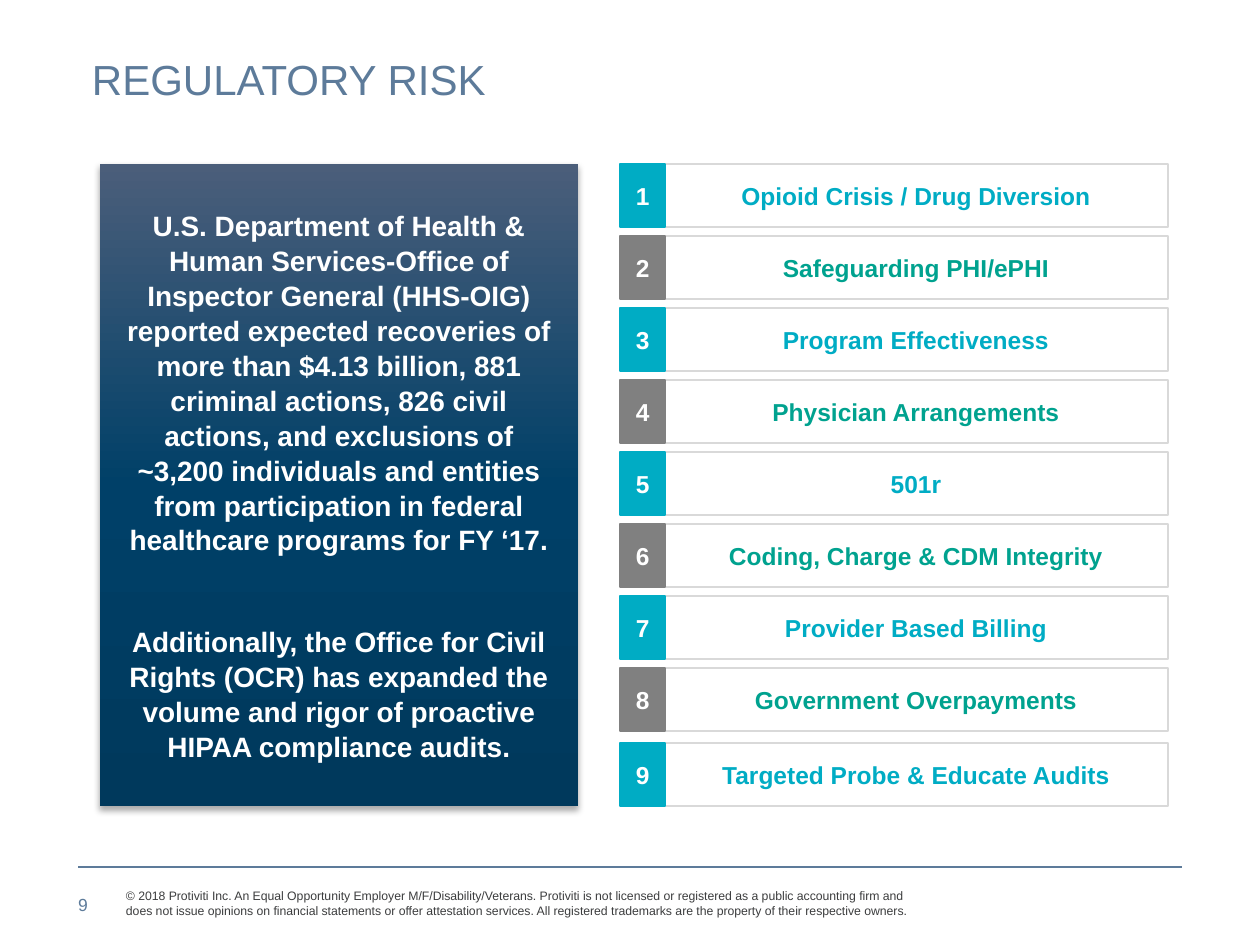
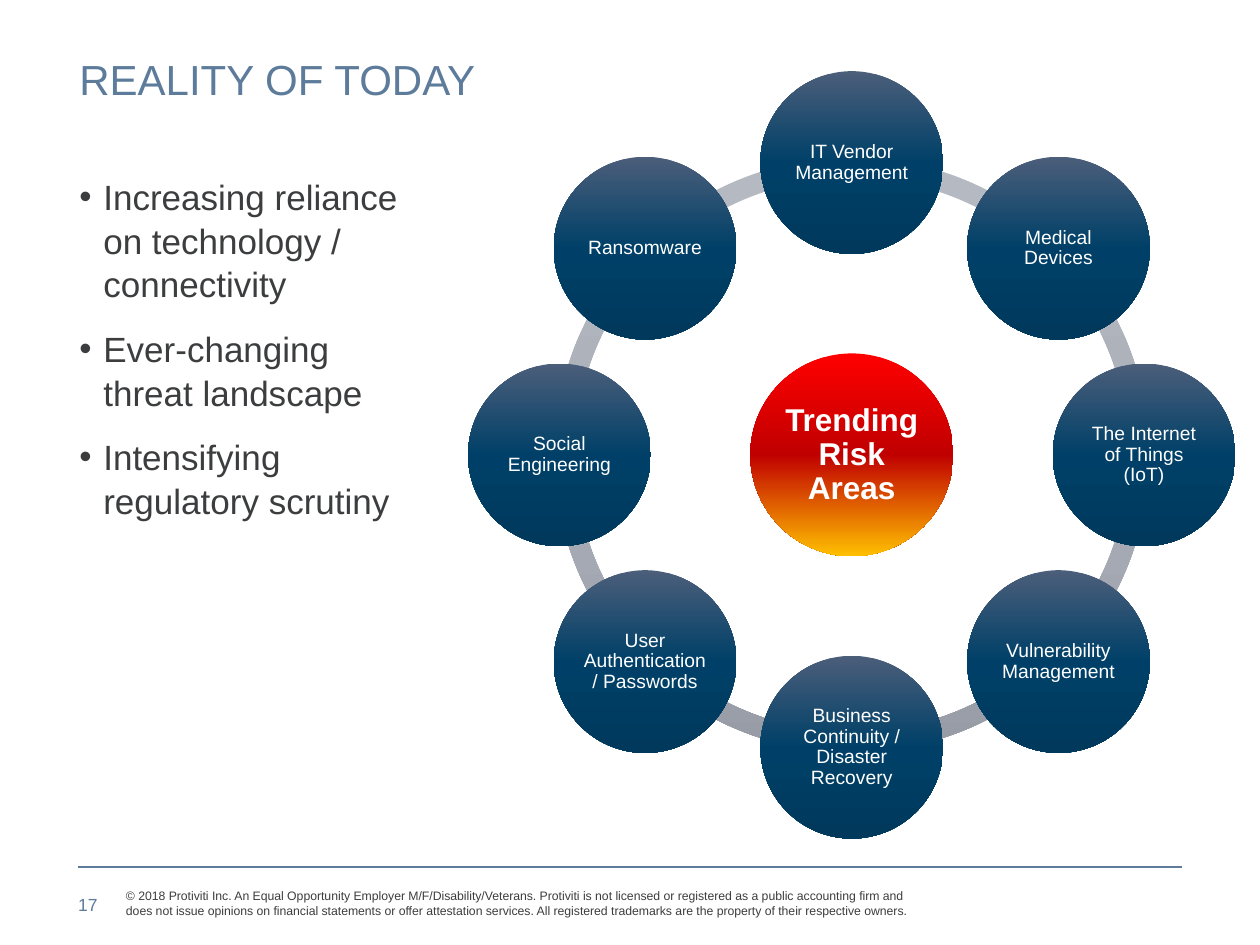
import math

from lxml import etree
from pptx import Presentation
from pptx.dml.color import RGBColor
from pptx.enum import shapes, text
from pptx.oxml import ns
from pptx.util import Inches, Pt

FONT = "Arial"
COLORS = {
    "slate": "5D7B9A", "ink": "3C3D3E", "white": "FFFFFF", "teal": "00ACC4",
    "green": "00A28F", "gray": "808080", "border": "D9D9D9",
}
NAVY = ("4B5E7A", "004068", "00395C")
FIRE = ("FF0000", "C00000", "FFC000")
SILVER = ("B5B9C1", "ABB0B9", "979CA6")

COPYRIGHT = (
    "© 2018 Protiviti Inc. An Equal Opportunity Employer M/F/Disability/Veterans. "
    "Protiviti is not licensed or registered as a public accounting firm and does not "
    "issue opinions on financial statements or offer attestation services. All registered "
    "trademarks are the property of their respective owners."
)
RECOVERIES = [
    "U.S. Department of Health & Human Services-Office of Inspector General (HHS-OIG) "
    "reported expected recoveries of more than $4.13 billion, 881 criminal actions, "
    "826 civil actions, and exclusions of ~3,200 individuals and entities from "
    "participation in federal healthcare programs for FY ‘17.",
    "Additionally, the Office for Civil Rights (OCR) has expanded the volume and rigor "
    "of proactive HIPAA compliance audits.",
]
REGULATORY_RISKS = [
    "Opioid Crisis / Drug Diversion", "Safeguarding PHI/ePHI", "Program Effectiveness",
    "Physician Arrangements", "501r", "Coding, Charge & CDM Integrity",
    "Provider Based Billing", "Government Overpayments", "Targeted Probe & Educate Audits",
]
REALITIES = [
    "Increasing reliance on technology / connectivity",
    "Ever-changing threat landscape",
    "Intensifying regulatory scrutiny",
]
# Clockwise from the top
TRENDING_RISKS = [
    "IT Vendor Management", "Medical Devices", "The Internet of Things (IoT)",
    "Vulnerability Management", "Business Continuity / Disaster Recovery",
    "User Authentication / Passwords", "Social Engineering", "Ransomware",
]


# Formatting helpers
def rgb(name):
    return RGBColor.from_string(COLORS[name])


def place(sp, left, top, width, height):
    sp.left, sp.top = Inches(left), Inches(top)
    sp.width, sp.height = Inches(width), Inches(height)


def write(sp, lines, size, color, bold=False, align=text.PP_ALIGN.LEFT, inset=None,
          anchor=text.MSO_ANCHOR.MIDDLE, leading=1.0, gap=0, bullets=False):
    tf = sp.text_frame
    tf.word_wrap = True
    tf.auto_size = text.MSO_AUTO_SIZE.NONE
    tf.vertical_anchor = anchor
    if inset is not None:
        tf.margin_left = tf.margin_right = Inches(inset)
        tf.margin_top = tf.margin_bottom = Inches(inset)
    for i, line in enumerate(lines):
        p = tf.paragraphs[0] if i == 0 else tf.add_paragraph()
        p.text = line
        p.alignment = align
        p.line_spacing = leading
        p.space_before = Pt(gap if i else 0)
        p.space_after = Pt(0)
        set_bullet(p, bullets)
        for r in p.runs:
            r.font.name, r.font.size, r.font.bold = FONT, Pt(size), bold
            r.font.color.rgb = rgb(color)
    return tf


def set_bullet(p, shown):
    pPr = p._p.get_or_add_pPr()
    indent = Inches(0.19) if shown else 0
    pPr.set("marL", str(indent))
    pPr.set("indent", str(-indent))
    if shown:
        etree.SubElement(pPr, ns.qn("a:buFont"), typeface=FONT)
        etree.SubElement(pPr, ns.qn("a:buChar"), char="•")
    else:
        etree.SubElement(pPr, ns.qn("a:buNone"))


def fill_gradient(sp, stops):
    """Fill from top to bottom with evenly spaced colours."""
    sp.fill.gradient()
    sp.fill.gradient_angle = 270
    gs_list = sp._element.spPr.find(".//" + ns.qn("a:gsLst"))
    for gs in list(gs_list):
        gs_list.remove(gs)
    for i, color in enumerate(stops):
        pos = 100000 * i // (len(stops) - 1)
        gs = etree.SubElement(gs_list, ns.qn("a:gs"), pos=str(pos))
        etree.SubElement(gs, ns.qn("a:srgbClr"), val=color)


def add_soft_shadow(sp):
    effects = etree.SubElement(sp._element.spPr, ns.qn("a:effectLst"))
    shadow = etree.SubElement(effects, ns.qn("a:outerShdw"), blurRad=str(Pt(3.5)),
                              dist=str(Pt(2.2)), dir="5400000", rotWithShape="0")
    color = etree.SubElement(shadow, ns.qn("a:srgbClr"), val="000000")
    etree.SubElement(color, ns.qn("a:alpha"), val="32000")


# Elements
def add_slide(prs, title, number, title_inset):
    slide = prs.slides.add_slide(prs.slide_layouts[1])
    place(slide.shapes.title, 0.63, 0, 8.75, 1.25)
    tf = write(slide.shapes.title, [title], 24, "slate", inset=0)
    tf.margin_left = tf.margin_right = Inches(title_inset)

    # Footer rule, page number and copyright line
    rule = slide.shapes.add_connector(shapes.MSO_CONNECTOR.STRAIGHT, Inches(0.62),
                                      Inches(6.88), Inches(9.38), Inches(6.88))
    rule.line.color.rgb = rgb("slate")
    rule.line.width = Pt(1)
    etree.SubElement(rule._element.spPr, ns.qn("a:effectLst"))
    for label, left, top, width, height, size, color in (
        (COPYRIGHT, 1, 7.05, 6.27, 0.24, 7, "ink"),
        (str(number), 0.62, 7.09, 0.3, 0.17, 10, "slate"),
    ):
        box = slide.shapes.add_textbox(0, 0, 0, 0)
        place(box, left, top, width, height)
        write(box, [label], size, color, inset=0)
    return slide


def add_shape(slide, kind, left, top, width, height):
    sp = slide.shapes.add_shape(kind, Inches(left), Inches(top),
                                Inches(width), Inches(height))
    sp.shadow.inherit = False
    return sp


def add_cell(slide, left, top, width, label, color, line, fill=None):
    sp = add_shape(slide, shapes.MSO_SHAPE.RECTANGLE, left, top, width, 0.5)
    if fill:
        sp.fill.solid()
        sp.fill.fore_color.rgb = rgb(fill)
    else:
        sp.fill.background()
    sp.line.color.rgb = rgb(line)
    sp.line.width = Pt(1)
    write(sp, [label], 14, color, bold=True, align=text.PP_ALIGN.CENTER)


def add_risk_row(slide, number, top, label):
    odd = number % 2 == 1
    add_cell(slide, 5.27, top, 4, label, "teal" if odd else "green", "border")
    badge = "teal" if odd else "gray"
    add_cell(slide, 4.92, top, 0.36, str(number), "white", badge, badge)


def add_circle(slide, cx, cy, diameter, label, stops, size, bold=False):
    sp = add_shape(slide, shapes.MSO_SHAPE.OVAL, cx - diameter / 2, cy - diameter / 2,
                   diameter, diameter)
    fill_gradient(sp, stops)
    sp.line.fill.background()
    write(sp, [label], size, "white", bold, text.PP_ALIGN.CENTER, inset=0.02, leading=0.9)


def add_risk_wheel(slide, cx, cy, hub, labels):
    orbit, ring = 2.32, 4.72
    step = 360 / len(labels)
    for i in range(len(labels)):
        arc = add_shape(slide, shapes.MSO_SHAPE.BLOCK_ARC, cx - ring / 2, cy - ring / 2,
                        ring, ring)
        # Angles are kept in 60000ths of a degree, adjustments in 100000ths
        arc.adjustments[0] = i * step * 0.6
        arc.adjustments[1] = (i + 1) * step % 360 * 0.6
        arc.adjustments[2] = 0.034
        fill_gradient(arc, SILVER)
        arc.line.fill.background()
    add_circle(slide, cx, cy, 1.61, hub, FIRE, 18, bold=True)
    for i, label in enumerate(labels):
        angle = math.radians(i * step - 90)
        add_circle(slide, cx + orbit * math.cos(angle), cy + orbit * math.sin(angle),
                   1.45, label, NAVY, 11)


# Slides
def build_regulatory_risk(prs):
    slide = add_slide(prs, "REGULATORY RISK", 9, 0.1)
    panel = slide.placeholders[1]
    place(panel, 0.79, 1.3, 3.8, 5.1)
    fill_gradient(panel, NAVY)
    add_soft_shadow(panel)
    write(panel, RECOVERIES, 16, "white", bold=True, align=text.PP_ALIGN.CENTER,
          inset=0.2, leading=1.04, gap=38)
    tops = [1.3 + 4 * i / 7 for i in range(8)] + [5.9]
    for number, (top, label) in enumerate(zip(tops, REGULATORY_RISKS), 1):
        add_risk_row(slide, number, top, label)


def build_reality_of_today(prs):
    slide = add_slide(prs, "REALITY OF TODAY", 17, 0)
    add_risk_wheel(slide, 6.76, 3.61, "Trending Risk Areas", TRENDING_RISKS)
    body = slide.placeholders[1]
    place(body, 0.63, 1.38, 2.6, 3.7)
    write(body, REALITIES, 20, "ink", inset=0, anchor=text.MSO_ANCHOR.TOP,
          leading=1.04, gap=12, bullets=True)


def main():
    prs = Presentation()
    prs.slide_width, prs.slide_height = Inches(10), Inches(7.5)
    build_regulatory_risk(prs)
    build_reality_of_today(prs)
    prs.save("out.pptx")


if __name__ == "__main__":
    main()
